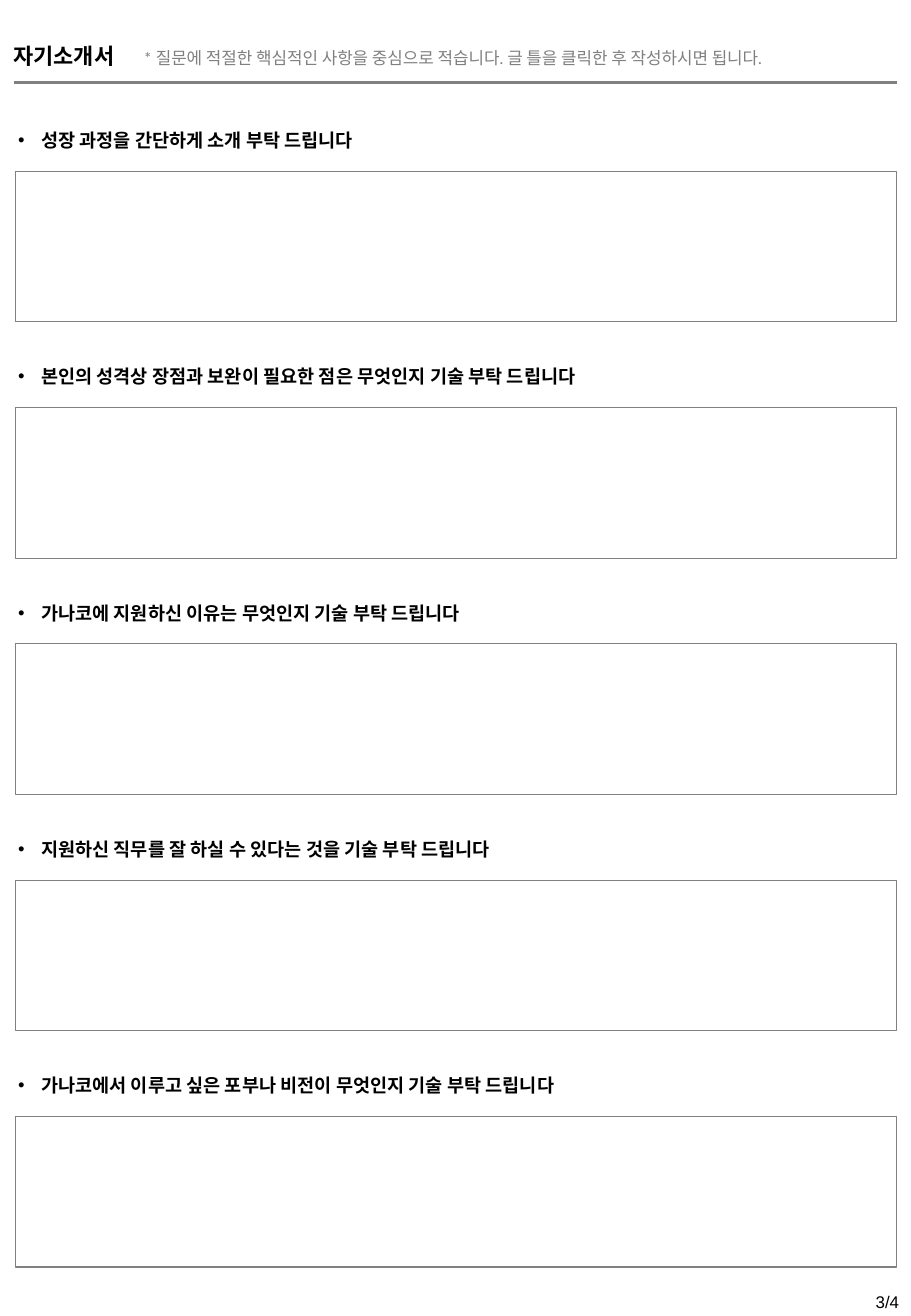
from lxml import etree
from pptx import Presentation
from pptx.dml.color import RGBColor
from pptx.enum import shapes, text
from pptx.oxml.ns import qn
from pptx.util import Cm, Pt

BLACK, GRAY = "000000", "808080"
QUESTIONS = [
    "성장 과정을 간단하게 소개 부탁 드립니다",
    "본인의 성격상 장점과 보완이 필요한 점은 무엇인지 기술 부탁 드립니다",
    "가나코에 지원하신 이유는 무엇인지 기술 부탁 드립니다",
    "지원하신 직무를 잘 하실 수 있다는 것을 기술 부탁 드립니다",
    "가나코에서 이루고 싶은 포부나 비전이 무엇인지 기술 부탁 드립니다",
]
QUESTION_STEP = Cm(4.94)


def color(hex_string):
    return RGBColor.from_string(hex_string)


def add_text(para, words, size=11, bold=False, fill=BLACK, font="Calibri"):
    span = para.add_run()
    span.text = words
    span.font.size = Pt(size)
    span.font.bold = bold
    span.font.name = font
    span.font.color.rgb = color(fill)


deck = Presentation()
deck.slide_width, deck.slide_height = Cm(19.05), Cm(27.51)
page = deck.slides.add_slide(deck.slide_layouts[5])

# Heading with a writing hint at a tab stop
title = page.shapes.title
title.left, title.top, title.width, title.height = Cm(0.03), Cm(0.76), Cm(19.02), Cm(0.81)
frame = title.text_frame
frame.word_wrap = True
frame.auto_size = text.MSO_AUTO_SIZE.NONE
frame.vertical_anchor = text.MSO_ANCHOR.TOP
para = frame.paragraphs[0]
para.alignment = text.PP_ALIGN.LEFT
tabs = etree.SubElement(para._p.get_or_add_pPr(), qn("a:tabLst"))
etree.SubElement(tabs, qn("a:tab"), pos=str(Cm(2.72)), algn="l")
add_text(para, "자기소개서", size=13, bold=True)
add_text(para, "\t* 질문에 적절한 핵심적인 사항을 중심으로 적습니다. 글 틀을 클릭한 후 작성하시면 됩니다.",
         size=10, fill=GRAY)

rule = page.shapes.add_connector(shapes.MSO_CONNECTOR.STRAIGHT,
                                 Cm(0.3), Cm(1.73), Cm(18.75), Cm(1.73))
rule.line.color.rgb = color(GRAY)
rule.line.width = Pt(1.5)
etree.SubElement(rule._element.spPr, qn("a:effectLst"))

# Page number
box = page.shapes.add_textbox(Cm(16.66), Cm(26.87), Cm(2.39), Cm(0.69))
box.text_frame.word_wrap = True
para = box.text_frame.paragraphs[0]
para.alignment = text.PP_ALIGN.RIGHT
add_text(para, "3/4", size=10, font="Arial")

# Questions, each above its answer frame
for index, question in enumerate(QUESTIONS):
    offset = index * QUESTION_STEP
    box = page.shapes.add_textbox(Cm(0.13), Cm(2.57) + offset, Cm(18.64), Cm(0.74))
    box.text_frame.word_wrap = True
    para = box.text_frame.paragraphs[0]
    properties = para._p.get_or_add_pPr()
    properties.set("marL", str(Cm(0.48)))
    properties.set("indent", str(-Cm(0.48)))
    etree.SubElement(properties, qn("a:buFont"), typeface="Arial")
    etree.SubElement(properties, qn("a:buChar"), char="•")
    add_text(para, question, bold=True)

    answer = page.shapes.add_shape(shapes.MSO_SHAPE.RECTANGLE,
                                   Cm(0.33), Cm(3.58) + offset, Cm(18.42), Cm(3.15))
    answer.shadow.inherit = False
    answer.fill.background()
    answer.line.color.rgb = color(GRAY)
    answer.line.width = Pt(0.75)

deck.save("out.pptx")
